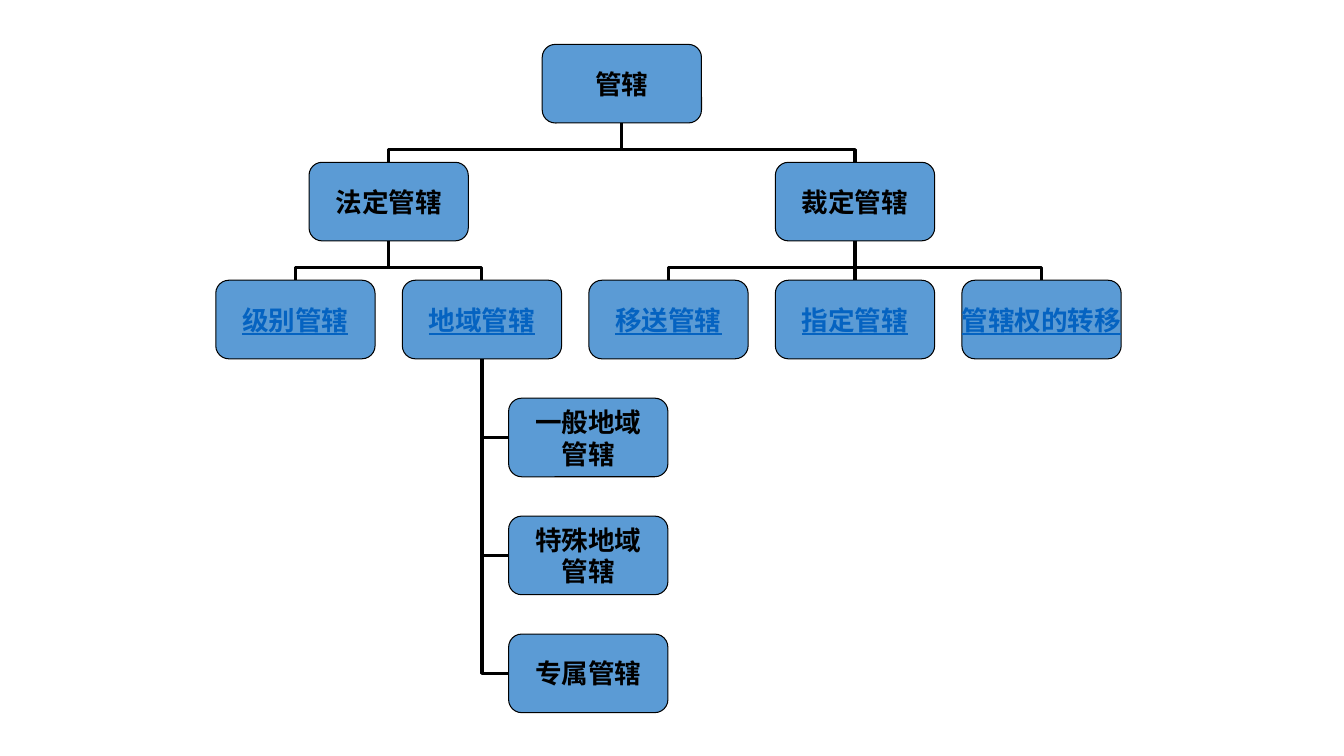
from lxml import etree
from pptx import Presentation
from pptx import util as u
from pptx.dml.color import RGBColor
from pptx.enum import shapes, text
from pptx.oxml.ns import qn

COLUMN, ROW = 1.85, 1.17
FIRST_CENTRE, FIRST_TOP = 2.93, 0.44
BOX_WIDTH, BOX_HEIGHT = 1.58, 0.78
TOP, LEFT, BOTTOM = 0, 1, 2
BLACK, BLUE, LINK = "000000", "5B9BD5", "0563C1"

# name: (text, column, row, text colour)
BOXES = {
    "root": ("管辖", 1.75, 0, BLACK),
    "statutory": ("法定管辖", 0.5, 1, BLACK),
    "ruled": ("裁定管辖", 3, 1, BLACK),
    "level": ("级别管辖", 0, 2, LINK),
    "territorial": ("地域管辖", 1, 2, LINK),
    "transfer": ("移送管辖", 2, 2, LINK),
    "designated": ("指定管辖", 3, 2, LINK),
    "shifted": ("管辖权的转移", 4, 2, LINK),
    "general": ("一般地域\n管辖", 1.57, 3, BLACK),
    "special": ("特殊地域\n管辖", 1.57, 4, BLACK),
    "exclusive": ("专属管辖", 1.57, 5, BLACK),
}
BRANCHES = {
    "root": ["statutory", "ruled"],
    "statutory": ["level", "territorial"],
    "ruled": ["transfer", "designated", "shifted"],
}
SIDE_BRANCHES = {"territorial": ["general", "special", "exclusive"]}


def colour(value):
    """Turn a hex string into a colour."""
    return RGBColor.from_string(value)


def add_box(slide, label, column, row, text_colour):
    """Add a rounded box centred on a grid column."""
    left = FIRST_CENTRE + column * COLUMN - BOX_WIDTH / 2
    top = FIRST_TOP + row * ROW
    shape = slide.shapes.add_shape(
        shapes.MSO_SHAPE.ROUNDED_RECTANGLE,
        u.Inches(left), u.Inches(top), u.Inches(BOX_WIDTH), u.Inches(BOX_HEIGHT))
    shape.shadow.inherit = False
    shape.fill.solid()
    shape.fill.fore_color.rgb = colour(BLUE)
    shape.line.color.rgb = colour(BLACK)
    shape.line.width = u.Pt(0.75)
    frame = shape.text_frame
    frame.text = label
    frame.word_wrap = False
    frame.vertical_anchor = text.MSO_ANCHOR.MIDDLE
    frame.margin_left = frame.margin_right = frame.margin_top = frame.margin_bottom = 0
    for paragraph in frame.paragraphs:
        paragraph.alignment = text.PP_ALIGN.CENTER
        for run in paragraph.runs:
            run.font.name = "Times New Roman"
            run.font.size = u.Pt(19)
            run.font.bold = True
            run.font.underline = text_colour == LINK
            run.font.color.rgb = colour(text_colour)
    return shape


def add_line(slide, kind, begin, begin_side, end, end_side):
    """Add a black connector joined to two boxes."""
    connector = slide.shapes.add_connector(kind, 0, 0, 0, 0)
    connector.begin_connect(begin, begin_side)
    connector.end_connect(end, end_side)
    connector.line.color.rgb = colour(BLACK)
    connector.line.width = u.Pt(2.25)
    etree.SubElement(connector.element.spPr, qn("a:effectLst"))
    return connector


def turn(connector, degrees, flip="0"):
    """Set the rotation and flip of a connector."""
    frame = connector.element.spPr.find(qn("a:xfrm"))
    frame.set("rot", str(degrees * 60000))
    frame.set("flipH", flip)
    frame.set("flipV", "0")


def add_branch(slide, parent, child):
    """Join a parent's bottom to a child's top."""
    start = parent.left + parent.width // 2
    across = child.left + child.width // 2 - start
    if abs(across) < u.Inches(0.02):
        add_line(slide, shapes.MSO_CONNECTOR.STRAIGHT, parent, BOTTOM, child, TOP)
        return
    connector = add_line(slide, shapes.MSO_CONNECTOR.ELBOW, parent, BOTTOM, child, TOP)
    bottom = parent.top + parent.height
    down = child.top - bottom
    connector.width, connector.height = down, abs(across)
    connector.left = start + (across - down) // 2
    connector.top = bottom + (down - abs(across)) // 2
    if across > 0:
        turn(connector, 270, "1")
    else:
        turn(connector, 90)
    adjustments = connector.element.spPr.find(qn("a:prstGeom")).find(qn("a:avLst"))
    etree.SubElement(adjustments, qn("a:gd"), name="adj1", fmla="val 67900")


def add_side_branch(slide, parent, child):
    """Join a child's left side to a parent's bottom."""
    connector = add_line(slide, shapes.MSO_CONNECTOR.ELBOW, child, LEFT, parent, BOTTOM)
    connector.element.spPr.find(qn("a:prstGeom")).set("prst", "bentConnector2")
    connector.left = parent.left + parent.width // 2
    connector.top = parent.top + parent.height
    connector.width = child.left - connector.left
    connector.height = child.top + child.height // 2 - connector.top
    turn(connector, 180)


def main():
    """Build the jurisdiction tree."""
    presentation = Presentation()
    presentation.slide_width, presentation.slide_height = u.Inches(13.33), u.Inches(7.5)
    slide = presentation.slides.add_slide(presentation.slide_layouts[6])
    boxes = {name: add_box(slide, *box) for name, box in BOXES.items()}
    for tree, join in ((BRANCHES, add_branch), (SIDE_BRANCHES, add_side_branch)):
        for parent, children in tree.items():
            for child in children:
                join(slide, boxes[parent], boxes[child])
    presentation.save("out.pptx")


if __name__ == "__main__":
    main()
